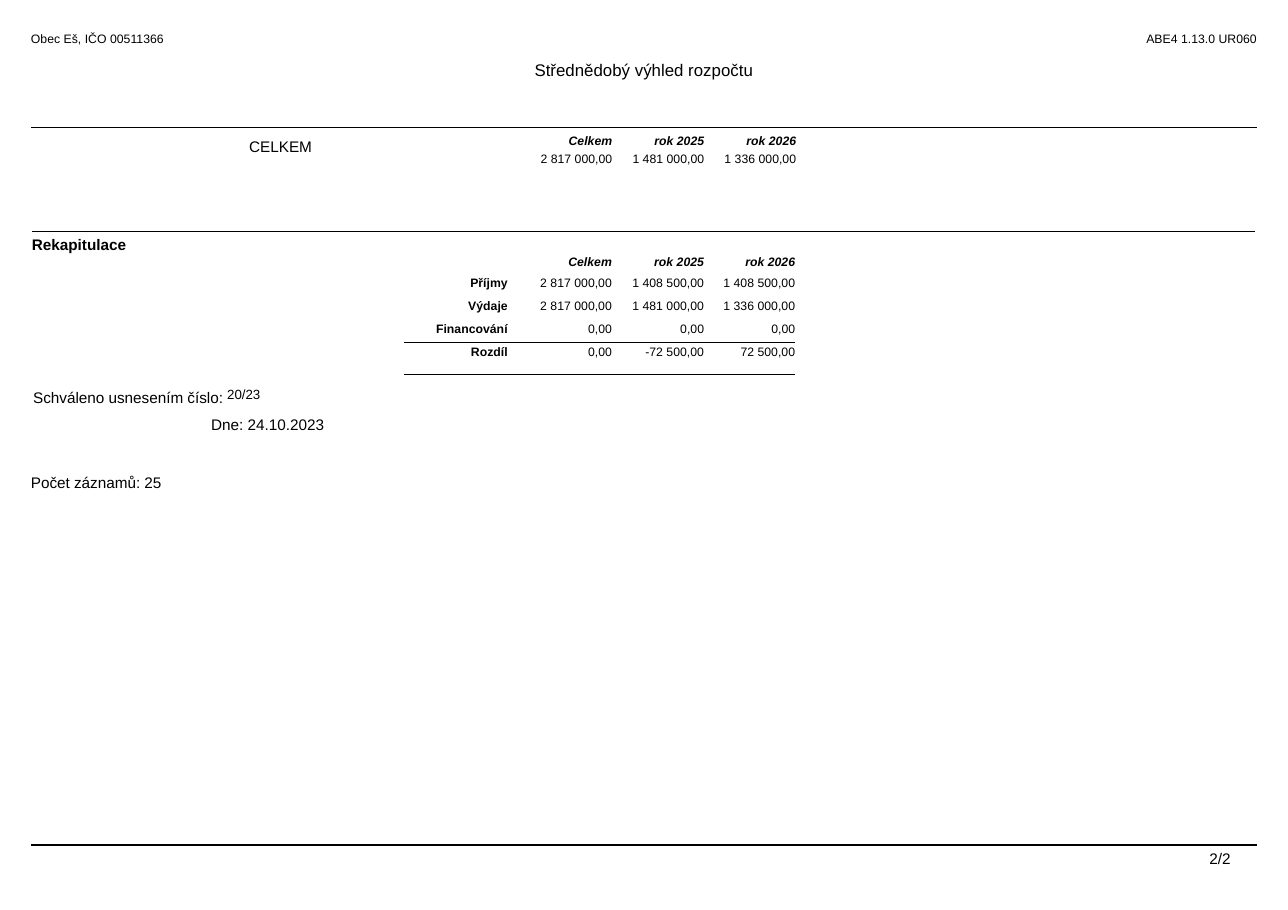
"""Build the closing page of a municipal medium-term budget outlook."""
from dataclasses import dataclass

from lxml.etree import SubElement
from pptx import Presentation
from pptx.dml.color import RGBColor as Rgb
from pptx.enum.shapes import MSO_CONNECTOR as Link
from pptx.enum.text import MSO_ANCHOR as Anchor, MSO_AUTO_SIZE as Fit, PP_ALIGN as Align
from pptx.oxml import parse_xml
from pptx.oxml.ns import nsdecls, qn
from pptx.slide import Slide
from pptx.table import _Cell as Cell
from pptx.text.text import TextFrame as Frame, _Paragraph as Para
from pptx.util import Inches, Length, Pt

WIDE, HIGH = 11.69, 8.26
EDGE = 2.4
BARE = "{2D5ABB26-0587-4C30-8999-92F81FD0307C}"


@dataclass(frozen=True)
class Theme:
    face: str = "Arial"
    ink: str = "000000"
    small: float = 8
    body: float = 10
    title: float = 11
    raised: float = 15


@dataclass(frozen=True)
class Line:
    text: str
    size: float
    bold: bool = False
    slant: bool = False
    before: float = 0
    lead: float | None = None


@dataclass(frozen=True)
class Box:
    left: float
    top: float
    width: float
    height: float
    lines: tuple[Line, ...]
    align: Align = Align.LEFT


@dataclass(frozen=True)
class Rule:
    top: float
    weight: float


THEME = Theme()
HEADS = ("Celkem", "rok 2025", "rok 2026")
TOTALS = ("2 817 000,00", "1 481 000,00", "1 336 000,00")
RECAP = (
    ("Příjmy", "2 817 000,00", "1 408 500,00", "1 408 500,00"),
    ("Výdaje", *TOTALS),
    ("Financování", "0,00", "0,00", "0,00"),
    ("Rozdíl", "0,00", "-72 500,00", "72 500,00"),
)
COLS = (28.91, 9.32, 7.61, 7.1, 6.33, 35.67)
ROWS = (2.54, 2.06, 2.54, 2.54, 2.54, 3.51, 3.87)
PADS = (0, 1.28, 0.8, 0.75, 0, 0)

RULES = (Rule(14.0, 0.5), Rule(92.86, 1))
BOXES = (
    Box(EDGE, 3.4, 20, 2, (Line("Obec Eš, IČO 00511366", THEME.small),)),
    Box(77.6, 3.4, 20, 2, (Line("ABE4 1.13.0 UR060", THEME.small),), Align.RIGHT),
    Box(19.35, 15.05, 10, 2.3, (Line("CELKEM", THEME.body),)),
    Box(16.4, 45.6, 20, 2.3, (Line("Dne: 24.10.2023", THEME.body),)),
    Box(EDGE, 52.0, 20, 2.3, (Line("Počet záznamů: 25", THEME.body),)),
    Box(93.9, 93.3, 4, 2.2, (Line("2/2", THEME.body),)),
) + tuple(
    Box(41.75 + 7.14 * i, 14.6, 5.8, 4.4,
        (Line(head, THEME.small, True, True), Line(total, THEME.small, before=2.5)),
        Align.RIGHT)
    for i, (head, total) in enumerate(zip(HEADS, TOTALS))
)


def across(share: float) -> Length:
    """Turn a percentage of the slide's width into a length."""
    return Inches(WIDE * share / 100)


def down(share: float) -> Length:
    """Turn a percentage of the slide's height into a length."""
    return Inches(HIGH * share / 100)


def style(para: Para, line: Line, align: Align) -> None:
    """Set spacing, alignment and font of a paragraph."""
    para.alignment = align
    if line.before:
        para.space_before = Pt(line.before)
    if line.lead:
        para.line_spacing = Pt(line.lead)
    font = para.font
    font.name, font.size = THEME.face, Pt(line.size)
    font.bold, font.italic = line.bold, line.slant
    font.color.rgb = Rgb.from_string(THEME.ink)


def write(frame: Frame, lines: tuple[Line, ...], align: Align) -> None:
    """Fill a frame without insets with styled lines."""
    frame.word_wrap, frame.auto_size = True, Fit.NONE
    frame.vertical_anchor = Anchor.TOP
    frame.margin_left = frame.margin_right = 0
    frame.margin_top = frame.margin_bottom = 0
    for i, line in enumerate(lines):
        para = frame.add_paragraph() if i else frame.paragraphs[0]
        para.text = line.text
        style(para, line, align)


def add_box(slide: Slide, box: Box) -> None:
    """Draw one text box."""
    shape = slide.shapes.add_textbox(
        across(box.left), down(box.top), across(box.width), down(box.height))
    write(shape.text_frame, box.lines, box.align)


def add_title(slide: Slide, text: str) -> None:
    """Place the centred page title."""
    title = slide.shapes.title
    title.left, title.top = across(EDGE), down(6.6)
    title.width, title.height = across(100 - 2 * EDGE), down(2.6)
    write(title.text_frame, (Line(text, THEME.title),), Align.CENTER)


def add_rule(slide: Slide, rule: Rule) -> None:
    """Draw a line from margin to margin."""
    y = down(rule.top)
    line = slide.shapes.add_connector(
        Link.STRAIGHT, across(EDGE), y, across(100 - EDGE), y)
    line.line.color.rgb = Rgb.from_string(THEME.ink)
    line.line.width = Pt(rule.weight)
    SubElement(line._element.spPr, qn("a:effectLst"))


def top_line(cell: Cell, weight: float) -> None:
    """Give a cell a line along its top."""
    cell._tc.get_or_add_tcPr().insert(0, parse_xml(
        f'<a:lnT {nsdecls("a")} w="{Pt(weight)}"><a:solidFill>'
        f'<a:srgbClr val="{THEME.ink}"/></a:solidFill></a:lnT>'))


def put(cell: Cell, line: Line, align: Align = Align.RIGHT, top: float = 0) -> None:
    """Write one styled line into a cell."""
    para = cell.text_frame.paragraphs[0]
    para.text = line.text
    style(para, line, align)
    cell.margin_top = down(top)


def add_recap(slide: Slide) -> None:
    """Draw the recapitulation table with its approval line."""
    table = slide.shapes.add_table(
        len(ROWS), len(COLS), across(2.48), down(25.42),
        across(sum(COLS)), down(sum(ROWS))).table
    table.first_row = table.horz_banding = False
    table._tbl.tblPr.find(qn("a:tableStyleId")).text = BARE
    for col, share in zip(table.columns, COLS):
        col.width = across(share)
    for row, share in zip(table.rows, ROWS):
        row.height = down(share)
        for cell, pad in zip(row.cells, PADS):
            cell.fill.background()
            cell.margin_left = cell.margin_top = cell.margin_bottom = 0
            cell.margin_right = across(pad)
            end = SubElement(cell.text_frame.paragraphs[0]._p, qn("a:endParaRPr"))
            end.set("sz", str(int(THEME.small * 100)))
    for c in range(len(COLS)):
        top_line(table.cell(0, c), 1)
    for r in (5, 6):
        for c in range(1, 5):
            top_line(table.cell(r, c), 0.25)
    table.cell(0, 1).merge(table.cell(0, 5))

    put(table.cell(0, 0), Line("Rekapitulace", THEME.body, True, lead=11.6), Align.LEFT, 0.48)
    for c, head in enumerate(HEADS, 2):
        put(table.cell(1, c), Line(head, THEME.small, True, True, lead=9.3))
    for r, entry in enumerate(RECAP, 2):
        for c, text in enumerate(entry, 1):
            put(table.cell(r, c), Line(text, THEME.small, c == 1), top=0.36)

    note = table.cell(6, 0)
    put(note, Line("Schváleno usnesením číslo: ", THEME.body, lead=11.1), Align.LEFT, 1.82)
    note.margin_left = across(0.1)
    mark = note.text_frame.paragraphs[0].add_run()
    mark.text, mark.font.size = "20/23", Pt(THEME.raised)
    mark.font._element.set("baseline", "17000")


def main() -> None:
    """Build and save the page."""
    deck = Presentation()
    deck.slide_width, deck.slide_height = Inches(WIDE), Inches(HIGH)
    slide = deck.slides.add_slide(deck.slide_layouts[5])
    add_title(slide, "Střednědobý výhled rozpočtu")
    for rule in RULES:
        add_rule(slide, rule)
    for box in BOXES:
        add_box(slide, box)
    add_recap(slide)
    deck.save("out.pptx")


if __name__ == "__main__":
    main()
